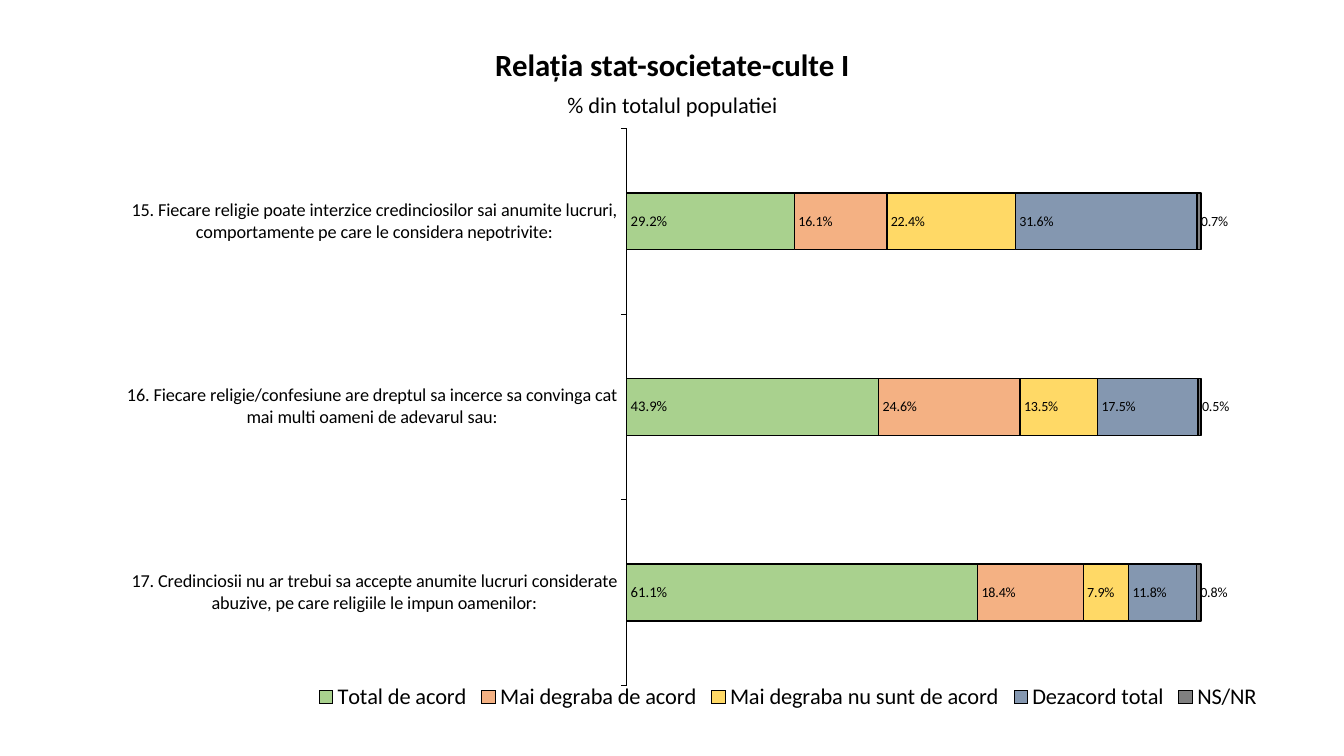
from pptx import Presentation
from pptx.chart.data import CategoryChartData
from pptx.dml.color import RGBColor
from pptx.enum.chart import XL_CHART_TYPE as ChartType
from pptx.enum.chart import XL_LABEL_POSITION as LabelSpot
from pptx.enum.chart import XL_LEGEND_POSITION as LegendSpot
from pptx.enum.chart import XL_TICK_MARK as TickMark
from pptx.enum.text import MSO_ANCHOR as Anchor
from pptx.enum.text import PP_ALIGN as Align
from pptx.oxml import parse_xml
from pptx.oxml.ns import nsdecls, qn
from pptx.util import Inches, Pt

WIDTH, HEIGHT = Inches(13.33), Inches(7.5)


class Theme:
    font = "Calibri"
    ink = "000000"
    title, subtitle, legend, category = 22, 16, 16, 13
    first_label, label = 10.5, 10
    axis_line, bar_line = 0.75, 1


# Each frame is left, top, width, height in percent of its parent.
HEADING_FRAME = (2.7, 1.47, 94.67, 14.8)
CHART_FRAME = (9.15, 15.33, 85.97, 79.73)
PLOT_FRAME = (43.6, 2.1, 49.7, 92.4)
LEGEND_FRAME = (16.3, 93.4, 82.5, 6)

HEADING = [
    ("Relația stat-societate-culte I", Theme.title, True,
     {"line_spacing": 1.07, "space_after": Pt(8)}),
    ("% din totalul populatiei", Theme.subtitle, False, {"line_spacing": 0.9}),
]

QUESTIONS = [
    "15. Fiecare religie poate interzice credinciosilor sai anumite lucruri, "
    "comportamente pe care le considera nepotrivite:",
    "16. Fiecare religie/confesiune are dreptul sa incerce sa convinga cat "
    "mai multi oameni de adevarul sau:",
    "17. Credinciosii nu ar trebui sa accepte anumite lucruri considerate "
    "abuzive, pe care religiile le impun oamenilor:",
]

ANSWERS = [
    ("Total de acord", "A9D18E", (0.292, 0.439, 0.611)),
    ("Mai degraba de acord", "F4B183", (0.161, 0.246, 0.184)),
    ("Mai degraba nu sunt de acord", "FFD966", (0.224, 0.135, 0.079)),
    ("Dezacord total", "8497B0", (0.316, 0.175, 0.118)),
    ("NS/NR", "808080", (0.007, 0.005, 0.008)),
]


def on_slide(frame):
    """Turn percents of the slide into lengths."""
    return [int(side * share / 100)
            for side, share in zip((WIDTH, HEIGHT) * 2, frame)]


def apply(target, values):
    for name, value in values.items():
        setattr(target, name, value)


def style_font(font, size, bold=False):
    apply(font, {"name": Theme.font, "size": Pt(size), "bold": bold})
    font.color.rgb = RGBColor.from_string(Theme.ink)


def style_line(line, width):
    line.width = Pt(width)
    line.color.rgb = RGBColor.from_string(Theme.ink)


def add_heading(slide):
    frame = slide.shapes.add_textbox(*on_slide(HEADING_FRAME)).text_frame
    apply(frame, {"word_wrap": True, "vertical_anchor": Anchor.BOTTOM})
    for index, (text, size, bold, spacing) in enumerate(HEADING):
        para = frame.add_paragraph() if index else frame.paragraphs[0]
        apply(para, {"alignment": Align.CENTER, **spacing})
        span = para.add_run()
        span.text = text
        style_font(span.font, size, bold)


def set_layout(element, index, frame, target=""):
    """Fix a chart part at a frame given in percent of the chart."""
    for old in element.findall(qn("c:layout")):
        element.remove(old)
    modes = '<c:xMode val="edge"/><c:yMode val="edge"/>'
    sides = "".join(f'<c:{name} val="{share / 100:.3f}"/>'
                    for name, share in zip("xywh", frame))
    element.insert(index, parse_xml(
        f'<c:layout {nsdecls("c")}><c:manualLayout>{target}{modes}{sides}'
        '</c:manualLayout></c:layout>'))


def style_axes(chart):
    questions, shares = chart.category_axis, chart.value_axis
    apply(questions, {"reverse_order": True, "has_major_gridlines": False,
                      "major_tick_mark": TickMark.OUTSIDE,
                      "minor_tick_mark": TickMark.NONE})
    style_font(questions.tick_labels.font, Theme.category)
    style_line(questions.format.line, Theme.axis_line)
    apply(shares, {"visible": False, "has_major_gridlines": False,
                   "minimum_scale": 0, "maximum_scale": 1, "major_unit": 0.5})


def style_series(series, color, label_size):
    series.format.fill.solid()
    series.format.fill.fore_color.rgb = RGBColor.from_string(color)
    style_line(series.format.line, Theme.bar_line)
    labels = series.data_labels
    apply(labels, {"show_value": True, "number_format": "0.0%",
                   "number_format_is_linked": False,
                   "position": LabelSpot.INSIDE_BASE})
    style_font(labels.font, label_size)


def add_legend(chart):
    chart.has_legend = True
    legend = chart.legend
    apply(legend, {"position": LegendSpot.RIGHT, "include_in_layout": False})
    style_font(legend.font, Theme.legend)
    set_layout(legend._element, 1, LEGEND_FRAME)


def add_answer_chart(slide):
    data = CategoryChartData(number_format="0.0%")
    data.categories = QUESTIONS
    for name, _, values in ANSWERS:
        data.add_series(name, values)
    chart = slide.shapes.add_chart(
        ChartType.BAR_STACKED_100, *on_slide(CHART_FRAME), data).chart
    chart.has_title = False
    style_font(chart.font, Theme.label)
    plot = chart.plots[0]
    apply(plot, {"gap_width": 227, "overlap": 100, "vary_by_categories": False})
    for index, (series, answer) in enumerate(zip(plot.series, ANSWERS)):
        style_series(series, answer[1],
                     Theme.label if index else Theme.first_label)
    style_axes(chart)
    add_legend(chart)
    set_layout(chart._chartSpace.chart.plotArea, 0, PLOT_FRAME,
               '<c:layoutTarget val="inner"/>')


def main():
    deck = Presentation()
    apply(deck, {"slide_width": WIDTH, "slide_height": HEIGHT})
    slide = deck.slides.add_slide(deck.slide_layouts[6])
    add_answer_chart(slide)
    add_heading(slide)
    deck.save("out.pptx")


if __name__ == "__main__":
    main()
